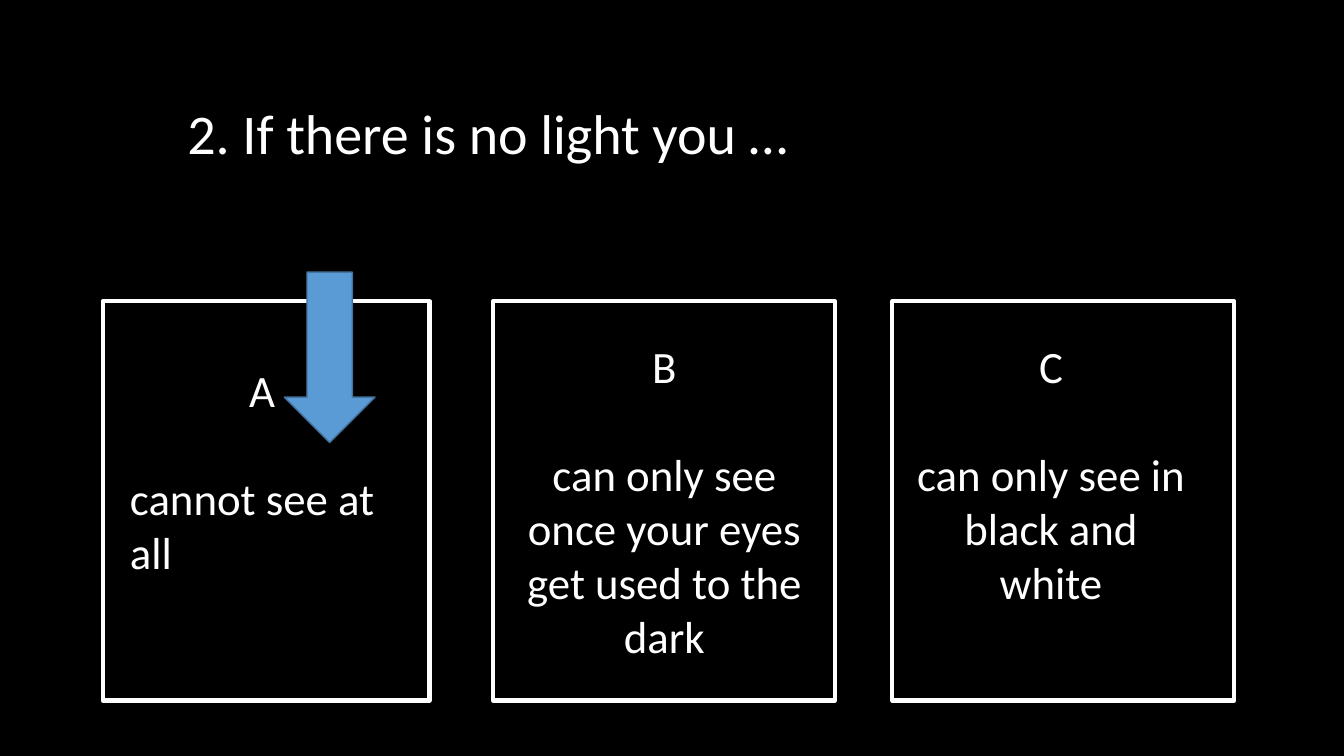
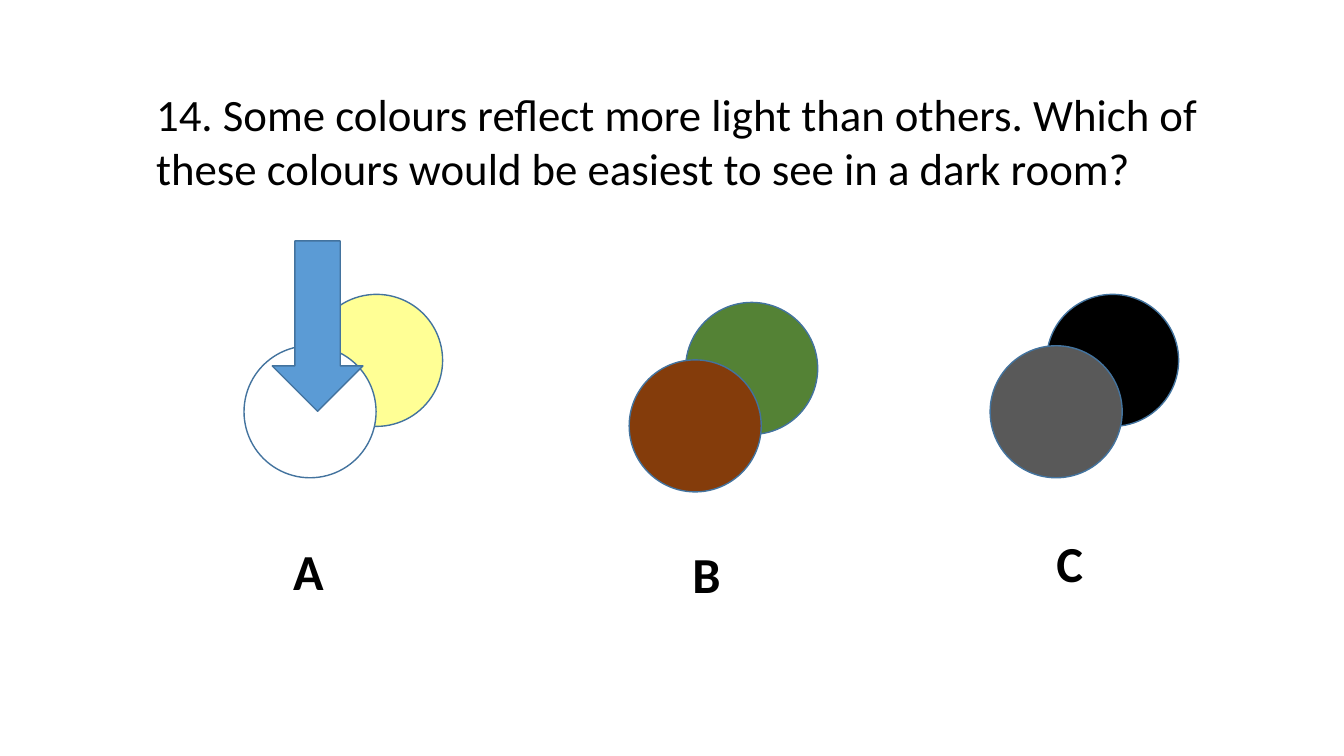
from dataclasses import dataclass

from lxml.etree import SubElement
from pptx import Presentation
from pptx.dml.color import RGBColor
from pptx.enum.shapes import MSO_SHAPE
from pptx.enum.text import PP_ALIGN
from pptx.oxml.ns import qn
from pptx.util import Inches, Pt


@dataclass(frozen=True)
class Theme:
    font: str = "Calibri"
    black: str = "000000"
    white: str = "FFFFFF"
    arrow: str = "5B9BD5"
    outline: str = "43739E"
    question_size: int = 40
    body_size: int = 32
    letter_size: int = 36
    thin_line: int = 1
    frame_line: int = 3
    answer_gap: int = 39


THEME = Theme()
LEFT, CENTER = PP_ALIGN.LEFT, PP_ALIGN.CENTER

LIGHT_QUESTION = "2. If there is no light you …"
FRAME_TOP, FRAME_HEIGHT = 2.99, 3.96
ANSWERS = [
    {"letter": "A", "answer": "cannot see at all", "align": LEFT,
     "text_box": (1.19, 3.55, 2.82, 2.31), "frame": (1.02, 3.24)},
    {"letter": "B", "answer": "can only see once your eyes get used to the dark", "align": CENTER,
     "text_box": (4.98, 3.31, 3.22, 3.33), "frame": (4.89, 3.39)},
    {"letter": "C", "answer": "can only see in black and white", "align": CENTER,
     "text_box": (8.94, 3.31, 2.97, 2.79), "frame": (8.85, 3.39)},
]

COLOUR_QUESTION = ("14. Some colours reflect more light than others. "
                   "Which of these colours would be easiest to see in a dark room?")
CIRCLE_SIZE = 1.31
COLOUR_PAIRS = [
    {"letter": "A", "letter_at": (2.81, 5.31),
     "circles": [(3.08, 2.92, "FFFF66", 69), (2.42, 3.43, "FFFFFF", 100)]},
    {"letter": "B", "letter_at": (6.77, 5.34),
     "circles": [(6.8, 3, "548235", 100), (6.24, 3.57, "843C0B", 100)]},
    {"letter": "C", "letter_at": (10.38, 5.23),
     "circles": [(10.38, 2.92, "000000", 100), (9.82, 3.43, "595959", 100)]},
]
LETTER_SIZE = (1.33, 0.71)
ARROW_SIZE = (0.9, 1.69)


def rgb(colour):
    return RGBColor.from_string(colour)


def add_slide(presentation, background):
    slide = presentation.slides.add_slide(presentation.slide_layouts[6])
    slide.background.fill.solid()
    slide.background.fill.fore_color.rgb = rgb(background)
    return slide


def add_text(slide, box, lines, size, colour, bold=False, gap=0):
    frame = slide.shapes.add_textbox(*map(Inches, box)).text_frame
    frame.word_wrap = True
    for index, (text, align) in enumerate(lines):
        paragraph = frame.add_paragraph() if index else frame.paragraphs[0]
        paragraph.text = text
        paragraph.alignment = align
        paragraph.space_before = Pt(gap if index else 0)
        paragraph.font.name = THEME.font
        paragraph.font.size = Pt(size)
        paragraph.font.bold = bold
        paragraph.font.color.rgb = rgb(colour)


def add_shape(slide, kind, box, fill=None, line=THEME.outline, width=THEME.thin_line, opacity=100):
    shape = slide.shapes.add_shape(kind, *map(Inches, box))
    shape.shadow.inherit = False
    shape.line.color.rgb = rgb(line)
    shape.line.width = Pt(width)
    if fill is None:
        shape.fill.background()
        return
    shape.fill.solid()
    shape.fill.fore_color.rgb = rgb(fill)
    if opacity < 100:
        colour = shape.fill._xPr.find(qn("a:solidFill"))[0]
        SubElement(colour, qn("a:alpha")).set("val", str(opacity * 1000))


def add_answer_arrow(slide, left, top):
    add_shape(slide, MSO_SHAPE.DOWN_ARROW, (left, top, *ARROW_SIZE), THEME.arrow)


def build_light_slide(presentation):
    slide = add_slide(presentation, THEME.black)
    add_text(slide, (1.76, 0.93, 10.15, 0.77), [(LIGHT_QUESTION, LEFT)],
             THEME.question_size, THEME.white)
    for answer in ANSWERS:
        lines = [(answer["letter"], CENTER), (answer["answer"], answer["align"])]
        add_text(slide, answer["text_box"], lines, THEME.body_size, THEME.white,
                 gap=THEME.answer_gap)
        left, width = answer["frame"]
        add_shape(slide, MSO_SHAPE.RECTANGLE, (left, FRAME_TOP, width, FRAME_HEIGHT),
                  line=THEME.white, width=THEME.frame_line)
    add_answer_arrow(slide, 2.82, 2.7)


def build_colour_slide(presentation):
    slide = add_slide(presentation, THEME.white)
    add_text(slide, (1.45, 0.81, 11.47, 1.18), [(COLOUR_QUESTION, LEFT)],
             THEME.body_size, THEME.black)
    for pair in COLOUR_PAIRS:
        for left, top, fill, opacity in pair["circles"]:
            add_shape(slide, MSO_SHAPE.OVAL, (left, top, CIRCLE_SIZE, CIRCLE_SIZE),
                      fill, opacity=opacity)
        add_text(slide, (*pair["letter_at"], *LETTER_SIZE), [(pair["letter"], LEFT)],
                 THEME.letter_size, THEME.black, bold=True)
    add_answer_arrow(slide, 2.7, 2.39)


def main():
    presentation = Presentation()
    presentation.slide_width = Inches(13.33)
    presentation.slide_height = Inches(7.5)
    build_light_slide(presentation)
    build_colour_slide(presentation)
    presentation.save("out.pptx")


if __name__ == "__main__":
    main()
